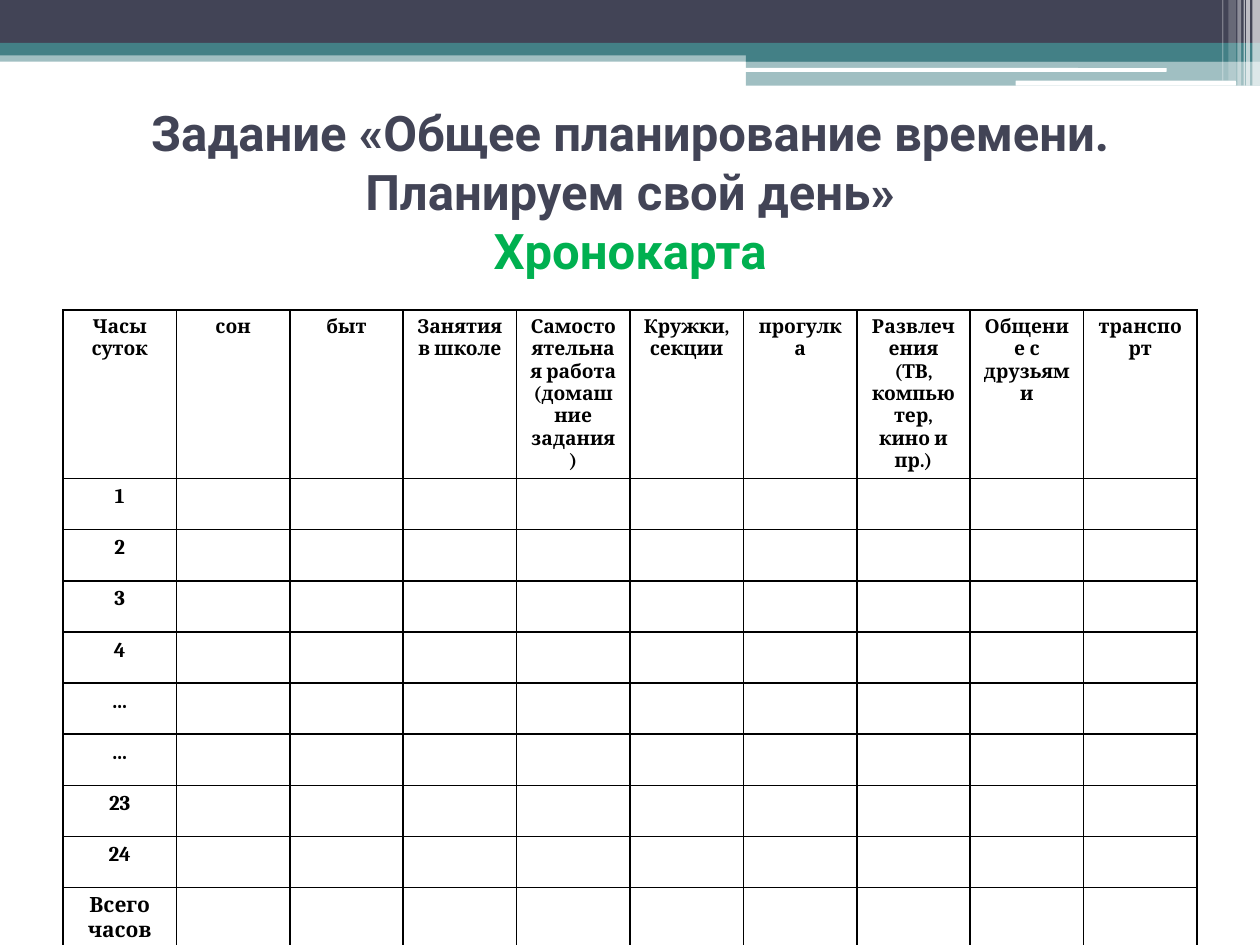
"""Build the day-planning slide with its chronocard table."""
from lxml import etree
from pptx import Presentation, util as u
from pptx.dml.color import RGBColor
from pptx.enum import shapes, text
from pptx.oxml import ns

NAVY = RGBColor(0x42, 0x44, 0x56)
TEAL = RGBColor(0x43, 0x80, 0x86)
GREEN = RGBColor(0x00, 0xB0, 0x50)
WHITE = RGBColor(0xFF, 0xFF, 0xFF)
BLACK = RGBColor(0, 0, 0)
RECT = shapes.MSO_SHAPE.RECTANGLE
ROUND = shapes.MSO_SHAPE.ROUNDED_RECTANGLE

deck = Presentation()
deck.slide_width, deck.slide_height = u.Inches(10), u.Inches(7.5)
slide = deck.slides.add_slide(deck.slide_layouts[5])


def add_bar(box, color, alpha=100, kind=RECT):
    bar = slide.shapes.add_shape(kind, *map(u.Inches, box))
    bar.shadow.inherit = False
    bar.fill.solid()
    bar.fill.fore_color.rgb = color
    bar.line.fill.background()
    if alpha < 100:
        tint = bar.fill._xPr.find(".//" + ns.qn("a:srgbClr"))
        etree.SubElement(tint, ns.qn("a:alpha"), val=str(alpha * 1000))


def add_edges(cell):
    props = cell._tc.get_or_add_tcPr()
    for spot, side in enumerate(("lnL", "lnR", "lnT", "lnB")):
        edge = etree.Element(ns.qn("a:" + side), w=str(u.Pt(1)))
        fill = etree.SubElement(edge, ns.qn("a:solidFill"))
        etree.SubElement(fill, ns.qn("a:srgbClr"), val=str(BLACK))
        props.insert(spot, edge)


split = 5.92
wide = 10 - split
for box, color, alpha in (
    ((0, 0.4, 10, 0.09), TEAL, 50),
    ((0, 0, 10, 0.34), NAVY, 100),
    ((0, 0.34, 10, 0.1), TEAL, 100),
    ((split, 0.39, wide, 0.1), TEAL, 100),
    ((split, 0.48, wide, 0.2), TEAL, 50),
):
    add_bar(box, color, alpha)
for box in ((5.91, 0.54, 3.35, 0.03), (8.06, 0.64, 1.75, 0.04)):
    add_bar(box, WHITE, kind=ROUND)
for left, width, height, alpha in (
    (9.94, 0.06, 0.68, 65),
    (9.89, 0.03, 0.68, 65),
    (9.87, 0.01, 0.68, 60),
    (9.82, 0.03, 0.68, 40),
    (9.75, 0.06, 0.64, 20),
    (9.7, 0.01, 0.64, 30),
):
    add_bar((left, 0, width, height), WHITE, alpha)

title = slide.shapes.title
slide.shapes._spTree.append(title._element)
title.left, title.top = u.Inches(0.5), u.Inches(0.62)
title.width, title.height = u.Inches(9), u.Inches(1.79)
frame = title.text_frame
frame.text = "Задание «Общее планирование времени. Планируем свой день»\vХронокарта"
frame.word_wrap = True
frame.vertical_anchor = text.MSO_ANCHOR.MIDDLE
para = frame.paragraphs[0]
para.alignment = text.PP_ALIGN.CENTER
for run, color in zip(para.runs, (NAVY, GREEN)):
    run.font.name, run.font.size, run.font.bold = "Roboto", u.Pt(28), True
    run.font.color.rgb = color

heads = (
    "Часы суток", "сон", "быт", "Занятия в школе",
    "Самостоятельная работа (домашние задания)", "Кружки, секции",
    "прогулка", "Развлечения (ТВ, компьютер, кино и пр.)",
    "Общение с друзьями", "транспорт",
)
hours = ("1", "2", "3", "4", "…", "…", "23", "24", "Всего часов")
rows = [heads] + [(hour,) + ("",) * (len(heads) - 1) for hour in hours]
table = slide.shapes.add_table(
    len(rows), len(heads), u.Inches(0.5), u.Inches(2.46), u.Inches(9), u.Inches(4.06)
).table
table.first_row = table.horz_banding = False
for r, row in enumerate(rows):
    for c, words in enumerate(row):
        cell = table.cell(r, c)
        cell.fill.background()
        add_edges(cell)
        cell.text_frame.text = words
        para = cell.text_frame.paragraphs[0]
        para.alignment = text.PP_ALIGN.CENTER
        para.font.size = u.Pt(12)
        for run in para.runs:
            run.font.name, run.font.bold = "Cambria", True
            run.font.size = u.Pt(12 if r else 11)
            run.font.color.rgb = BLACK

deck.save("out.pptx")
